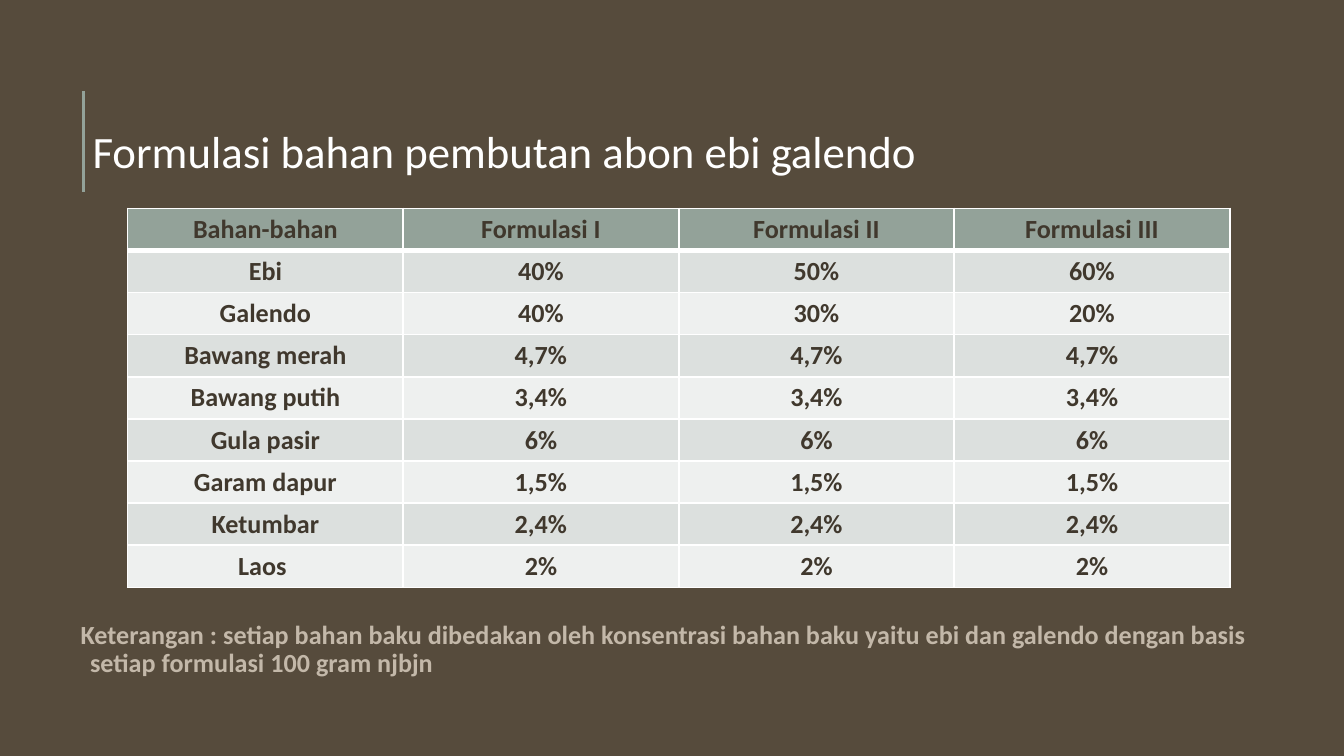
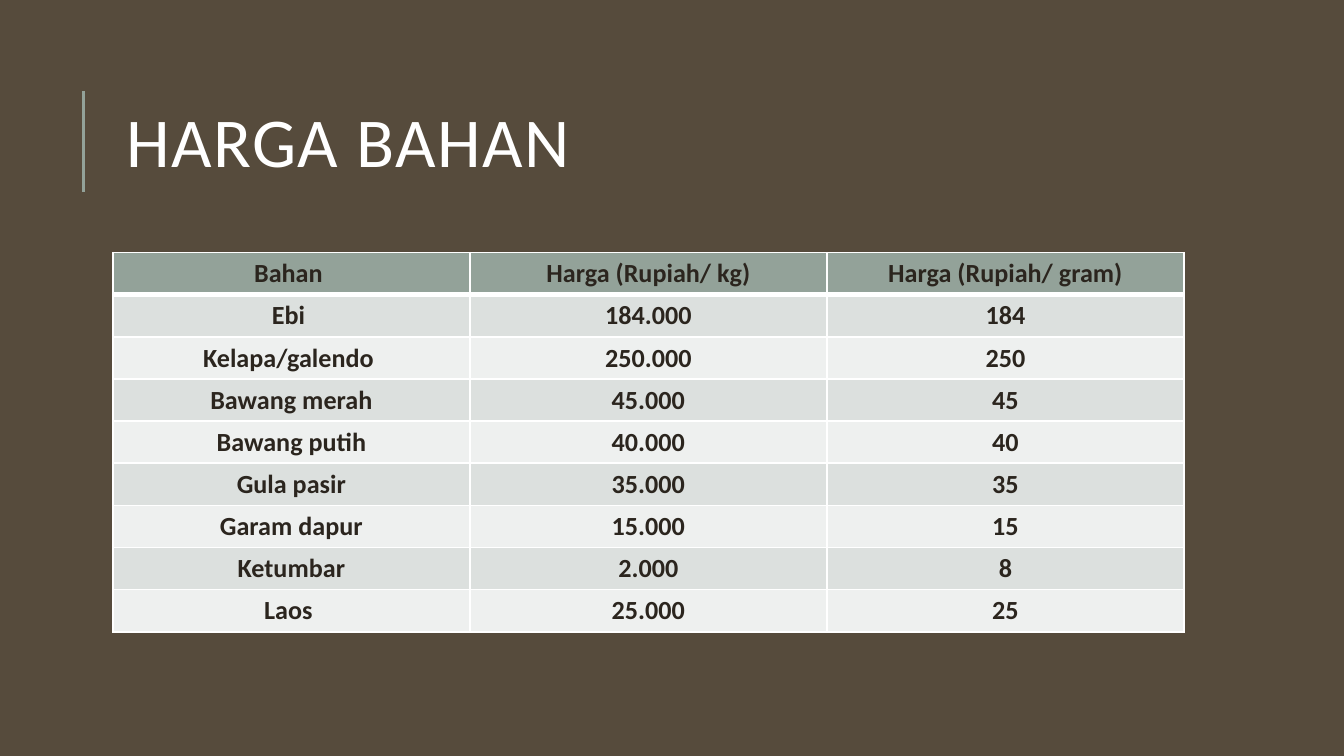
import dataclasses

import lxml.etree
import pptx
import pptx.dml.color
import pptx.enum.shapes
import pptx.enum.text
import pptx.oxml.ns
import pptx.util

Inches = pptx.util.Inches
Pt = pptx.util.Pt
qn = pptx.oxml.ns.qn
Align = pptx.enum.text.PP_ALIGN
Anchor = pptx.enum.text.MSO_ANCHOR


@dataclasses.dataclass(frozen=True)
class Theme:
    font: str = "Calibri"
    back: str = "564B3C"
    sage: str = "93A299"
    white: str = "FFFFFF"
    note: str = "C3B8A9"
    mix: str = "40382D"
    price: str = "2B251E"
    bands: tuple = ("DCE0DE", "EEF0EF")
    body: float = 14
    head: float = 24
    large: float = 37.5
    thin: float = 1
    thick: float = 3


THEME = Theme()

MIXES = [
    ("Bahan-bahan", "Formulasi I", "Formulasi II", "Formulasi III"),
    ("Ebi", "40%", "50%", "60%"),
    ("Galendo", "40%", "30%", "20%"),
    *[(name, share, share, share) for name, share in (
        ("Bawang merah", "4,7%"),
        ("Bawang putih", "3,4%"),
        ("Gula pasir", "6%"),
        ("Garam dapur", "1,5%"),
        ("Ketumbar", "2,4%"),
        ("Laos ", "2%"),
    )],
]

PRICES = [
    ("Bahan ", "Harga (Rupiah/ kg)", "Harga (Rupiah/ gram)"),
    ("Ebi ", "184.000", "184"),
    ("Kelapa/galendo ", "250.000", "250"),
    ("Bawang merah", "45.000", "45"),
    ("Bawang putih", "40.000", "40"),
    ("Gula pasir", "35.000", "35"),
    ("Garam dapur", "15.000", "15"),
    ("Ketumbar", "2.000", "8"),
    ("Laos ", "25.000", "25"),
]

NOTE = ("Keterangan : setiap bahan baku dibedakan oleh konsentrasi bahan baku "
        "yaitu ebi dan galendo dengan basis setiap formulasi 100 gram njbjn")


def color(code):
    return pptx.dml.color.RGBColor.from_string(code)


def write(frame, text, size=THEME.body, ink=THEME.white, bold=False,
          align=Align.LEFT, lead=1.0, track=0, hang=0):
    """Fill a text frame; track is in points, hang in inches."""
    para = frame.paragraphs[0]
    para.alignment = align
    para.line_spacing = lead
    run = para.add_run()
    run.text = text
    font = run.font
    font.name, font.size, font.bold = THEME.font, Pt(size), bold
    font.color.rgb = color(ink)
    if track:
        run._r.get_or_add_rPr().set("spc", str(round(track * 100)))
    if hang:
        props = para._p.get_or_add_pPr()
        props.set("marL", str(Inches(hang)))
        props.set("indent", str(-Inches(hang)))


def add_box(slide, box, text, inset=(0.1, 0.05), anchor=Anchor.TOP, **style):
    shape = slide.shapes.add_textbox(*map(Inches, box))
    frame = shape.text_frame
    frame.word_wrap = True
    frame.vertical_anchor = anchor
    frame.margin_left = frame.margin_right = Inches(inset[0])
    frame.margin_top = frame.margin_bottom = Inches(inset[1])
    write(frame, text, **style)


def add_title(slide, box, text, **style):
    add_box(slide, box, text, anchor=Anchor.MIDDLE, lead=0.8, **style)


def add_rule(slide, x, top, end):
    rule = slide.shapes.add_connector(
        pptx.enum.shapes.MSO_CONNECTOR.STRAIGHT,
        Inches(x), Inches(end), Inches(x), Inches(top))
    rule.line.color.rgb = color(THEME.sage)
    rule.line.width = Pt(1.5)
    lxml.etree.SubElement(rule._element.spPr, qn("a:effectLst"))


def set_edges(cell, top, low):
    """Draw white borders, with widths in points for the top and bottom."""
    props = cell._tc.get_or_add_tcPr()
    edges = (("L", THEME.thin), ("R", THEME.thin), ("T", top), ("B", low))
    for place, (side, width) in enumerate(edges):
        line = lxml.etree.Element(qn("a:ln" + side), w=str(Pt(width)))
        fill = lxml.etree.SubElement(line, qn("a:solidFill"))
        lxml.etree.SubElement(fill, qn("a:srgbClr"), val=THEME.white)
        props.insert(place, line)


def add_table(slide, box, rows, ink, pad):
    """Place a table with equal columns and rows in the box."""
    left, top, width, height = map(Inches, box)
    count = len(rows[0])
    grid = slide.shapes.add_table(
        len(rows), count, left, top, width, height).table
    grid.horz_banding = False
    for col in grid.columns:
        col.width = round(width / count)
    for i, row in enumerate(rows):
        grid.rows[i].height = round(height / len(rows))
        for j, text in enumerate(row):
            cell = grid.cell(i, j)
            cell.margin_left = cell.margin_right = Inches(pad)
            cell.margin_top = cell.margin_bottom = Inches(0.04)
            cell.fill.solid()
            cell.fill.fore_color.rgb = color(
                THEME.bands[(i - 1) % 2] if i else THEME.sage)
            set_edges(cell, THEME.thick if i == 1 else THEME.thin,
                      THEME.thin if i else THEME.thick)
            write(cell.text_frame, text, ink=ink, bold=True,
                  align=Align.CENTER)


def add_slide(deck):
    slide = deck.slides.add_slide(deck.slide_layouts[6])
    fill = slide.background.fill
    fill.solid()
    fill.fore_color.rgb = color(THEME.back)
    add_rule(slide, 0.62, 0.68, 1.43)
    return slide


def add_mixes(deck):
    slide = add_slide(deck)
    add_title(slide, (0.59, 0.77, 9.45, 0.78),
              "Formulasi bahan pembutan abon ebi galendo", size=THEME.head)
    add_box(slide, (0.55, 4.58, 9, 0.55), NOTE, inset=(0.05, 0.05),
            ink=THEME.note, bold=True, lead=0.9, hang=0.07)
    add_table(slide, (0.95, 1.55, 8.2, 2.77), MIXES, THEME.mix, 0.1)


def add_prices(deck):
    slide = add_slide(deck)
    add_title(slide, (0.84, 0.48, 7.97, 1.23), "HARGA BAHAN",
              size=THEME.large, track=0.8)
    add_table(slide, (0.84, 1.88, 7.97, 2.77), PRICES, THEME.price, 0.09)


def main():
    deck = pptx.Presentation()
    deck.slide_width = Inches(10)
    deck.slide_height = deck.slide_width * 9 // 16
    add_mixes(deck)
    add_prices(deck)
    deck.save("out.pptx")


if __name__ == "__main__":
    main()
